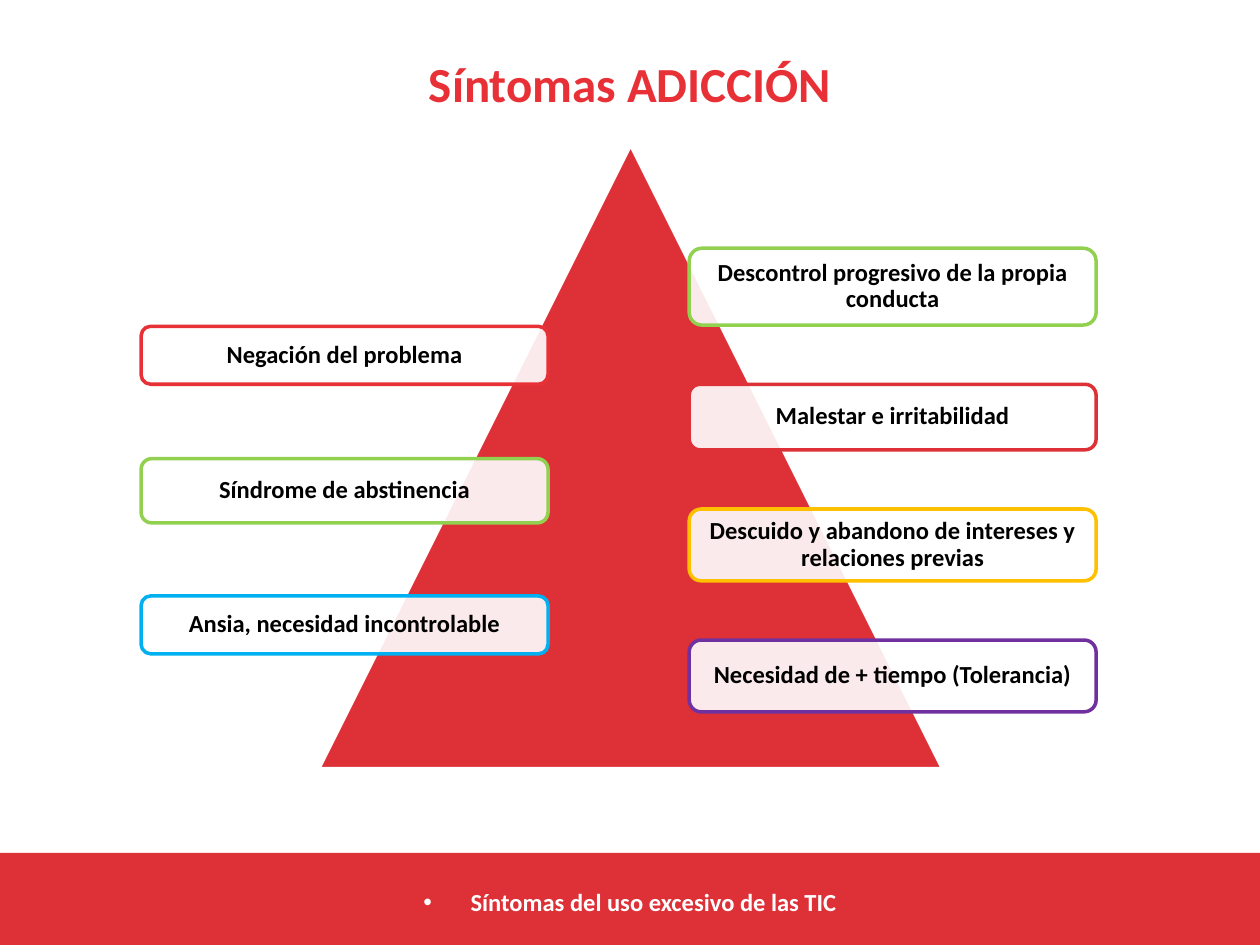
from dataclasses import dataclass

from lxml import etree
from pptx import Presentation
from pptx import util as u
from pptx.dml.color import RGBColor
from pptx.enum import shapes, text
from pptx.oxml import ns


@dataclass(frozen=True)
class Theme:
    font: str = "Calibri"
    red: str = "DD3137"
    bright_red: str = "E73137"
    green: str = "92D050"
    blue: str = "00B0F0"
    amber: str = "FFC000"
    purple: str = "7030A0"
    white: str = "FFFFFF"
    black: str = "000000"
    title_size: int = 28
    label_size: int = 14
    line_width: int = 2


THEME = Theme()
COLUMNS, ROWS = 1000, 750
CELL = u.Inches(0.01)

TITLE_BOX = (50, 30, 900, 72)
TRIANGLE_BOX = (253, 115, 495, 495)
LEFT_BOX = (112, 259, 323, 260)
RIGHT_BOX = (547, 197, 323, 368)
FOOTER_BOX = (0, 677, COLUMNS, 73)

LEFT_LABELS = [
    ("Negación del problema", THEME.bright_red, 0, 46),
    ("Síndrome de abstinencia", THEME.green, 105, 51),
    ("Ansia, necesidad incontrolable", THEME.blue, 214, 46),
]
RIGHT_LABELS = [
    ("Descontrol progresivo de la propia conducta", THEME.green, 0, 61),
    ("Malestar e irritabilidad", THEME.red, 108, 52),
    ("Descuido y abandono de intereses y relaciones previas", THEME.amber, 207, 57),
    ("Necesidad de + tiempo (Tolerancia)", THEME.purple, 311, 57),
]


def set_values(target, values):
    for name, value in values.items():
        setattr(target, name, value)


def place(shape, box):
    names = ("left", "top", "width", "height")
    set_values(shape, {name: CELL * size for name, size in zip(names, box)})


def write(shape, wording, size, color, inset=0.05, spacing=1.0):
    frame = shape.text_frame
    frame.text = wording
    margins = ("margin_left", "margin_top", "margin_right", "margin_bottom")
    set_values(frame, {name: u.Inches(inset) for name in margins})
    set_values(frame, {
        "word_wrap": True,
        "auto_size": text.MSO_AUTO_SIZE.NONE,
        "vertical_anchor": text.MSO_ANCHOR.MIDDLE,
    })
    para = frame.paragraphs[0]
    set_values(para, {
        "alignment": text.PP_ALIGN.CENTER,
        "line_spacing": spacing,
        "space_before": u.Pt(0),
    })
    span = para.runs[0]
    set_values(span.font, {"name": THEME.font, "size": u.Pt(size), "bold": True})
    span.font.color.rgb = RGBColor.from_string(color)


def add_figure(page, kind, box, fill, line=None):
    figure = page.shapes.add_shape(kind, 0, 0, 0, 0)
    place(figure, box)
    figure.shadow.inherit = False
    figure.fill.solid()
    figure.fill.fore_color.rgb = RGBColor.from_string(fill)
    if line:
        figure.line.color.rgb = RGBColor.from_string(line)
        figure.line.width = u.Pt(THEME.line_width)
    else:
        figure.line.fill.background()
    return figure


def add_title(page, box):
    title = page.shapes.title
    place(title, box)
    write(title, "Síntomas ADICCIÓN", THEME.title_size, THEME.bright_red)


def add_footer(page, box):
    left, top, width, height = box
    bar = add_figure(page, shapes.MSO_SHAPE.RECTANGLE, box, THEME.red)
    body = page.placeholders[1]
    body.element.addprevious(bar.element)
    place(body, (left + 50, top + 23, width - 100, 31))
    body.text_frame.text = ""
    properties = body.text_frame.paragraphs[0]._p.get_or_add_pPr()
    properties.set("marL", "0")
    properties.set("indent", "0")
    etree.SubElement(properties, ns.qn("a:buNone"))
    write(body, "Síntomas del uso excesivo de las TIC", THEME.label_size, THEME.white)


def add_triangle(page, box):
    add_figure(page, shapes.MSO_SHAPE.ISOSCELES_TRIANGLE, box, THEME.red, THEME.white)


def add_labels(page, box, labels):
    left, top, width, _ = box
    for wording, color, offset, height in labels:
        label = add_figure(page, shapes.MSO_SHAPE.ROUNDED_RECTANGLE,
                           (left, top + offset, width, height), THEME.white, color)
        fill = label.element.spPr.find(ns.qn("a:solidFill"))
        etree.SubElement(fill[0], ns.qn("a:alpha"), val="90000")
        write(label, wording, THEME.label_size, THEME.black, inset=0.06, spacing=0.9)


def main():
    deck = Presentation()
    set_values(deck, {"slide_width": CELL * COLUMNS, "slide_height": CELL * ROWS})
    page = deck.slides.add_slide(deck.slide_layouts[1])
    add_footer(page, FOOTER_BOX)
    add_triangle(page, TRIANGLE_BOX)
    add_labels(page, LEFT_BOX, LEFT_LABELS)
    add_labels(page, RIGHT_BOX, RIGHT_LABELS)
    add_title(page, TITLE_BOX)
    deck.save("out.pptx")


if __name__ == "__main__":
    main()
